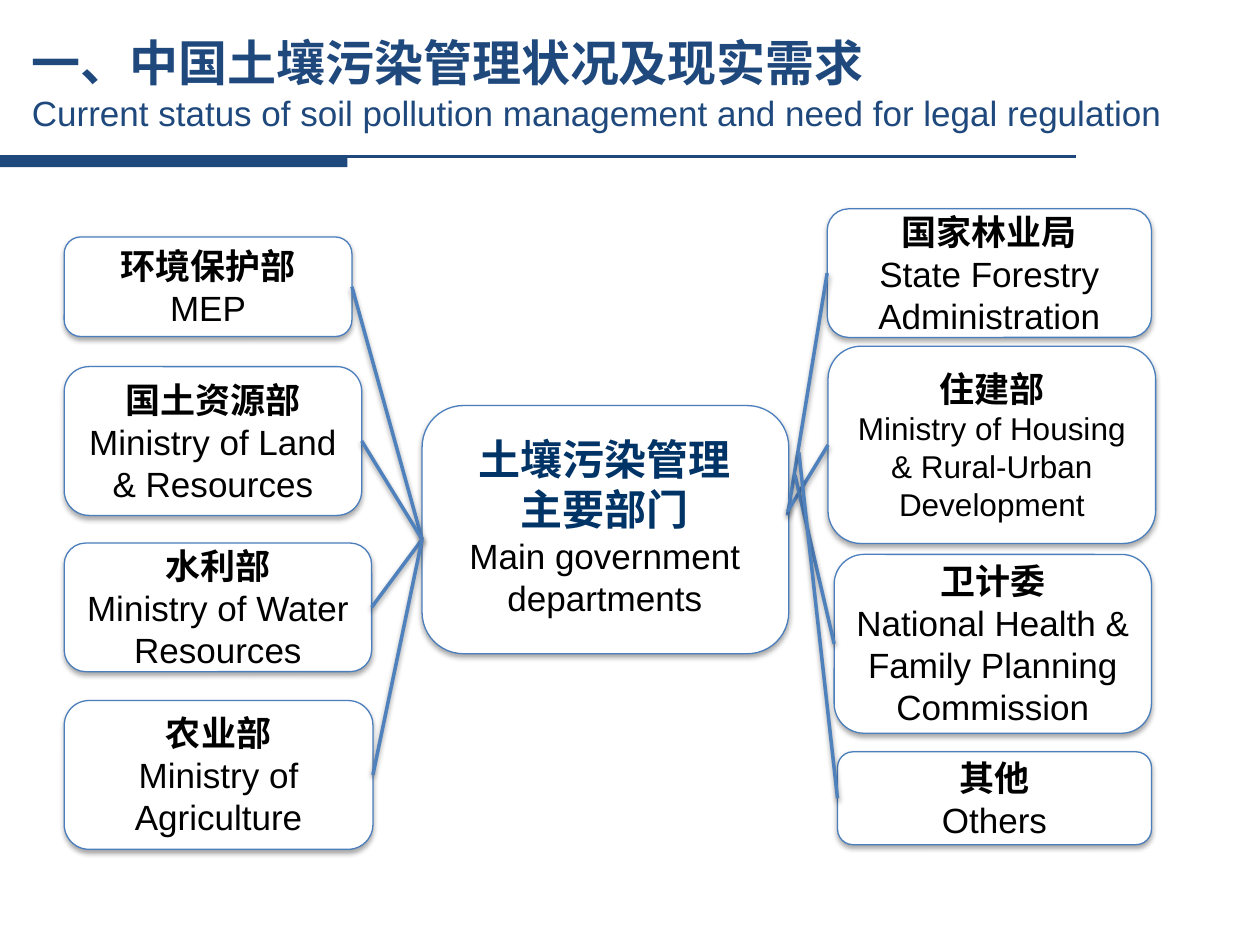
from lxml import etree
from pptx import Presentation
from pptx.dml.color import RGBColor
from pptx.enum.shapes import MSO_CONNECTOR, MSO_SHAPE
from pptx.enum.text import MSO_ANCHOR, MSO_AUTO_SIZE, PP_ALIGN
from pptx.oxml.ns import qn
from pptx.util import Pt

NAVY = RGBColor(0x1F, 0x49, 0x7D)
DEEP_BLUE = RGBColor(0x00, 0x33, 0x66)
BORDER_BLUE = RGBColor(0x4B, 0x7E, 0xBC)
LINK_BLUE = RGBColor(0x4F, 0x81, 0xBD)
WHITE = RGBColor(0xFF, 0xFF, 0xFF)
BLACK = RGBColor(0x00, 0x00, 0x00)
STRAIGHT = MSO_CONNECTOR.STRAIGHT
RECTANGLE, ROUNDED = MSO_SHAPE.RECTANGLE, MSO_SHAPE.ROUNDED_RECTANGLE
TOP, MIDDLE = MSO_ANCHOR.TOP, MSO_ANCHOR.MIDDLE
NO_FIT = MSO_AUTO_SIZE.NONE
LEFT, CENTER = PP_ALIGN.LEFT, PP_ALIGN.CENTER

LEFT_X = 36.7
HUB_BOX = (241.2, 231.8, 209.5, 141.8)
HUB_JOINT = (241.2, 308.2)

# Chinese name, English name, Chinese font, English size, box
LEFT_DEPARTMENTS = [
    ("环境保护部", "MEP", "Calibri", 20, (LEFT_X, 135.4, 164.4, 56.9)),
    ("国土资源部", "Ministry of Land & Resources", "Arial", 20,
     (LEFT_X, 209.5, 170, 85)),
    ("水利部", "Ministry of Water Resources", "Arial", 20,
     (LEFT_X, 310.3, 175.7, 73.5)),
    ("农业部", "Ministry of Agriculture", "Arial", 20,
     (LEFT_X, 400.3, 176.4, 85)),
]
# As above, followed by the point where the link meets the hub
RIGHT_DEPARTMENTS = [
    ("国家林业局", "State Forestry Administration", "Arial", 20,
     (472.7, 119.3, 185.3, 73.5), (450, 294.5)),
    ("住建部", "Ministry of Housing & Rural-Urban Development", "Arial", 18,
     (473.2, 197.9, 187.2, 112.7), (450, 292.3)),
    ("卫计委", "National Health & Family Planning Commission", "Arial", 20,
     (476.7, 316.8, 181.3, 102.2), (454.3, 271.4)),
    ("其他", "Others", "Calibri", 20,
     (478.6, 429.6, 179.4, 53.1), (456.5, 258.5)),
]


def points(values):
    """Turn plain numbers into lengths in points."""
    return [Pt(value) for value in values]


def add_shadow(shape, opacity, distance):
    """Give a shape or connector a soft shadow straight below it."""
    properties = shape._element.spPr
    effects = properties.find(qn("a:effectLst"))
    if effects is None:
        effects = etree.SubElement(properties, qn("a:effectLst"))
    shadow = etree.SubElement(
        effects, qn("a:outerShdw"), blurRad=str(Pt(3.1)),
        dist=str(Pt(distance)), dir="5400000", rotWithShape="0")
    color = etree.SubElement(shadow, qn("a:srgbClr"), val=str(BLACK))
    etree.SubElement(color, qn("a:alpha"), val=str(opacity * 1000))


def write_lines(frame, lines, alignment, anchor):
    """Write one paragraph for each (text, font, size, color, bold)."""
    frame.word_wrap = True
    frame.auto_size = NO_FIT
    frame.vertical_anchor = anchor
    for index, (text, name, size, color, bold) in enumerate(lines):
        para = frame.add_paragraph() if index else frame.paragraphs[0]
        para.text = text
        para.alignment = alignment
        para.font.name = name
        para.font.size = Pt(size)
        para.font.color.rgb = color
        para.font.bold = bold


def add_card(page, box):
    """Draw a white rounded card with a thin blue border."""
    card = page.shapes.add_shape(ROUNDED, *points(box))
    card.fill.solid()
    card.fill.fore_color.rgb = WHITE
    card.line.color.rgb = BORDER_BLUE
    card.line.width = Pt(0.75)
    card.shadow.inherit = False
    add_shadow(card, 35, 1.8)
    return card


def add_line(page, start, end, color, width):
    """Draw a straight line between two points."""
    line = page.shapes.add_connector(STRAIGHT, *points(start + end))
    line.line.color.rgb = color
    line.line.width = Pt(width)
    etree.SubElement(line._element.spPr, qn("a:effectLst"))
    return line


def add_header(page, box):
    """Place the two-line title and the rule beneath it."""
    add_line(page, (0, 89.3), (614.9, 89.3), NAVY, 1.5)
    bar = page.shapes.add_shape(RECTANGLE, *points((0, 90, 198.5, 5.6)))
    bar.fill.solid()
    bar.fill.fore_color.rgb = NAVY
    bar.line.fill.background()
    bar.shadow.inherit = False
    title = page.shapes.title
    title.left, title.top, title.width, title.height = points(box)
    write_lines(title.text_frame, [
        ("一、中国土壤污染管理状况及现实需求", "Calibri", 28, NAVY, True),
        ("Current status of soil pollution management and need for legal "
         "regulation", "Arial", 20, NAVY, False),
    ], LEFT, MIDDLE)


def add_hub(page, box):
    """Place the central card and its caption."""
    add_card(page, box)
    left, top, width, height = box
    caption = page.shapes.add_textbox(
        *points((left + 16.6, top + 12.3, width - 33.8, height - 28)))
    write_lines(caption.text_frame, [
        ("土壤污染管理主要部门", "Arial", 24, DEEP_BLUE, True),
        ("Main government departments", "Arial", 20, BLACK, False),
    ], CENTER, TOP)


def add_department(page, chinese, english, font, size, box, joint=None):
    """Place a department card and link its inner side to the hub."""
    card = add_card(page, box)
    write_lines(card.text_frame, [
        (chinese, font, 20, BLACK, True),
        (english, "Arial", size, BLACK, False),
    ], CENTER, MIDDLE)
    left, top, width, height = box
    inner_x = left if joint else left + width
    link = add_line(page, joint or HUB_JOINT, (inner_x, top + height / 2),
                    LINK_BLUE, 2)
    add_shadow(link, 38, 1.6)


def main():
    """Build the slide and save it."""
    deck = Presentation()
    deck.slide_width, deck.slide_height = Pt(720), Pt(540)
    page = deck.slides.add_slide(deck.slide_layouts[5])
    add_header(page, (11, 21, 683.3, 52.6))
    add_hub(page, HUB_BOX)
    for department in RIGHT_DEPARTMENTS + LEFT_DEPARTMENTS:
        add_department(page, *department)
    deck.save("out.pptx")


if __name__ == "__main__":
    main()
